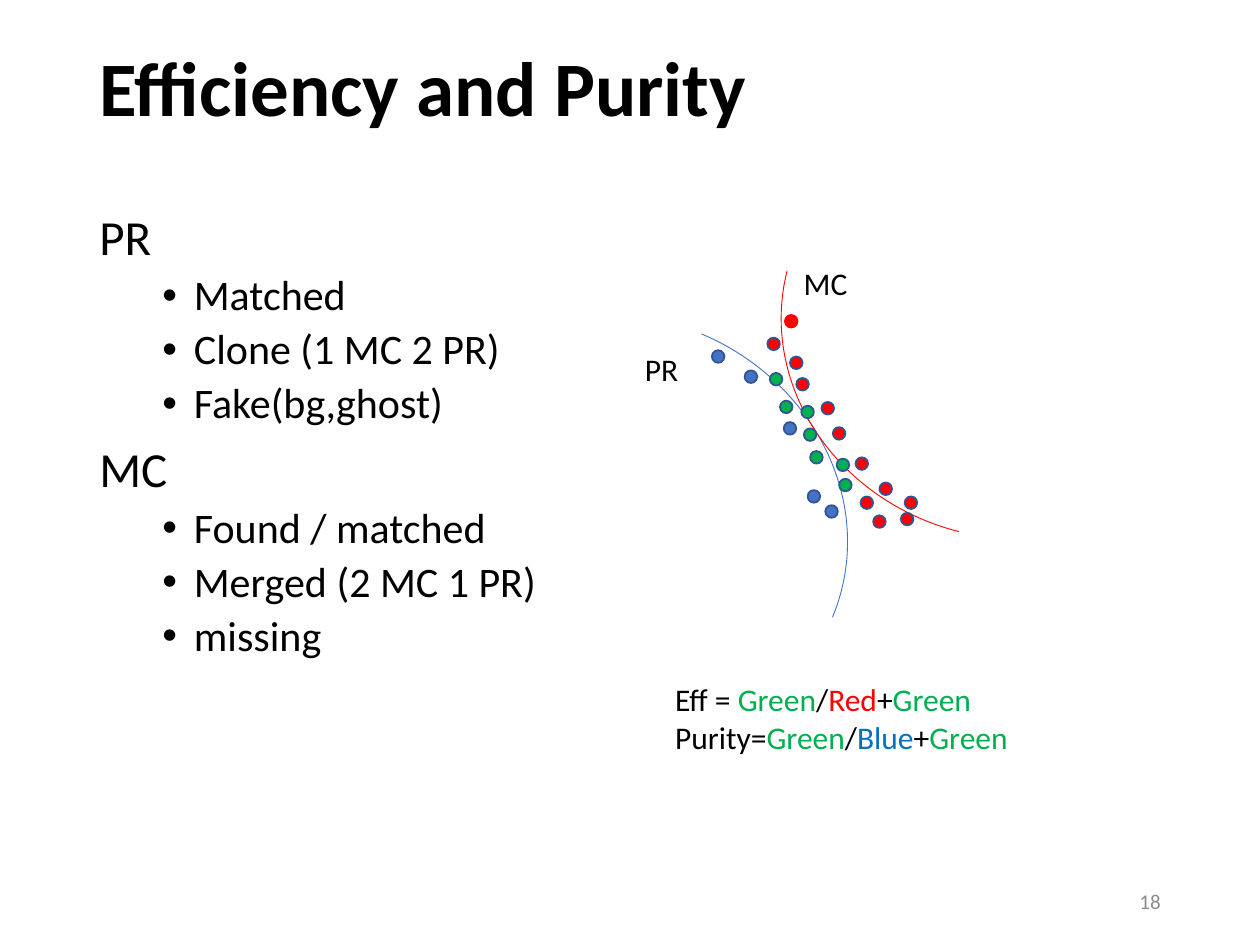
from lxml.etree import SubElement
from pptx import Presentation
from pptx.dml.color import RGBColor
from pptx.enum.shapes import MSO_SHAPE as Shape
from pptx.enum.text import MSO_ANCHOR as Anchor, PP_ALIGN as Align
from pptx.oxml.ns import qn
from pptx.util import Inches, Pt

THEME = {
    "font": "Calibri",
    "colors": {
        "text": "000000", "muted": "8C8C8C", "red": "FF0000", "green": "00B050",
        "blue": "4472C4", "blue word": "0070C0", "outline": "325491",
    },
    "sizes": {"title": 44, "group": 28, "item": 24, "label": 18, "number": 12},
    "lines": {"track": 0.5, "hit": 1},
}

TITLE = "Efficiency and Purity"
PAGE_NUMBER = "18"
CATEGORIES = [
    ("PR", ["Matched", "Clone (1 MC 2 PR)", "Fake(bg,ghost)"]),
    ("MC", ["Found / matched", "Merged (2 MC 1 PR)", "missing"]),
]
FORMULAS = [
    [("Eff = ", "text"), ("Green", "green"), ("/", "text"),
     ("Red", "red"), ("+", "text"), ("Green", "green")],
    [("Purity=", "text"), ("Green", "green"), ("/", "text"),
     ("Blue", "blue word"), ("+", "text"), ("Green", "green")],
]
TRACK_LABELS = [("MC", (6.28, 2.05, 0.55, 0.4)), ("PR", (5.02, 2.73, 0.47, 0.4))]
TRACKS = [("blue", (3.09, 2.52), 22.8), ("red", (6.19, 0.93), 194.2)]
TRACK_SIZE = (3.66, 3.34)
HIT_SIZE = (0.1, 0.1)
SEED_HIT = (6.23, 2.5)
HITS = {
    "red": [(6.27, 2.83), (6.32, 3), (6.09, 2.68), (6.52, 3.19), (6.61, 3.39),
            (6.79, 3.63), (6.98, 3.83), (6.83, 3.94), (6.93, 4.09),
            (7.18, 3.94), (7.15, 4.07)],
    "green": [(6.11, 2.96), (6.36, 3.22), (6.19, 3.18), (6.38, 3.4),
              (6.43, 3.58), (6.64, 3.64), (6.66, 3.8)],
    "blue": [(5.65, 2.78), (5.91, 2.94), (6.22, 3.35), (6.41, 3.89), (6.55, 4.01)],
}
GROUP_FORMAT = {"line_spacing": 0.9, "space_before": Pt(10)}
ITEM_FORMAT = {"line_spacing": 0.9, "space_before": Pt(5), "level": 1}


def color(name):
    return RGBColor.from_string(THEME["colors"][name])


def apply(target, settings):
    for attribute, value in settings.items():
        setattr(target, attribute, value)


def add_text(slide, box, lines, anchor=Anchor.TOP, wrap=True):
    frame = slide.shapes.add_textbox(*map(Inches, box)).text_frame
    apply(frame, {"word_wrap": wrap, "vertical_anchor": anchor})
    for index, (runs, size, settings) in enumerate(lines):
        paragraph = frame.add_paragraph() if index else frame.paragraphs[0]
        apply(paragraph, settings)
        for words, tint in runs:
            run = paragraph.add_run()
            run.text = words
            apply(run.font, {"name": THEME["font"], "size": Pt(THEME["sizes"][size]),
                             "bold": size == "title"})
            run.font.color.rgb = color(tint)
    return frame


def add_bullet(paragraph):
    properties = paragraph._p.get_or_add_pPr()
    properties.set("marL", str(Inches(0.75)))
    properties.set("indent", str(Inches(-0.25)))
    SubElement(properties, qn("a:buFont")).set("typeface", "Arial")
    SubElement(properties, qn("a:buChar")).set("char", "•")


def add_mark(slide, kind, position, size, line, weight, fill=None, rotation=0):
    mark = slide.shapes.add_shape(kind, *map(Inches, position + size))
    mark.shadow.inherit = False
    mark.rotation = rotation
    if fill:
        mark.fill.solid()
        mark.fill.fore_color.rgb = color(fill)
    else:
        mark.fill.background()
    mark.line.color.rgb = color(line)
    mark.line.width = Pt(THEME["lines"][weight])


def add_categories(slide):
    lines = []
    for group, items in CATEGORIES:
        lines.append(([(group, "text")], "group", GROUP_FORMAT))
        lines += [([(item, "text")], "item", ITEM_FORMAT) for item in items]
    frame = add_text(slide, (0.69, 1.64, 8.62, 5.12), lines)
    for paragraph in frame.paragraphs:
        if paragraph.level:
            add_bullet(paragraph)


def add_diagram(slide):
    for tint, position, rotation in TRACKS:
        add_mark(slide, Shape.ARC, position, TRACK_SIZE, tint, "track", rotation=rotation)
    add_mark(slide, Shape.OVAL, SEED_HIT, HIT_SIZE, "red", "hit", "red")
    for tint, positions in HITS.items():
        for position in positions:
            add_mark(slide, Shape.OVAL, position, HIT_SIZE, "outline", "hit", tint)
    for label, box in TRACK_LABELS:
        add_text(slide, box, [([(label, "text")], "label", {})], wrap=False)


def main():
    deck = Presentation()
    apply(deck, {"slide_width": Inches(10), "slide_height": Inches(7.5)})
    slide = deck.slides.add_slide(deck.slide_layouts[6])
    add_text(slide, (0.69, 0, 8.62, 1.45),
             [([(TITLE, "text")], "title", {"line_spacing": 0.9})], Anchor.MIDDLE)
    add_categories(slide)
    add_diagram(slide)
    add_text(slide, (5.26, 5.35, 2.87, 0.71),
             [(formula, "label", {}) for formula in FORMULAS], wrap=False)
    add_text(slide, (7.06, 6.95, 2.25, 0.4),
             [([(PAGE_NUMBER, "muted")], "number", {"alignment": Align.RIGHT})],
             Anchor.MIDDLE)
    deck.save("out.pptx")


if __name__ == "__main__":
    main()
